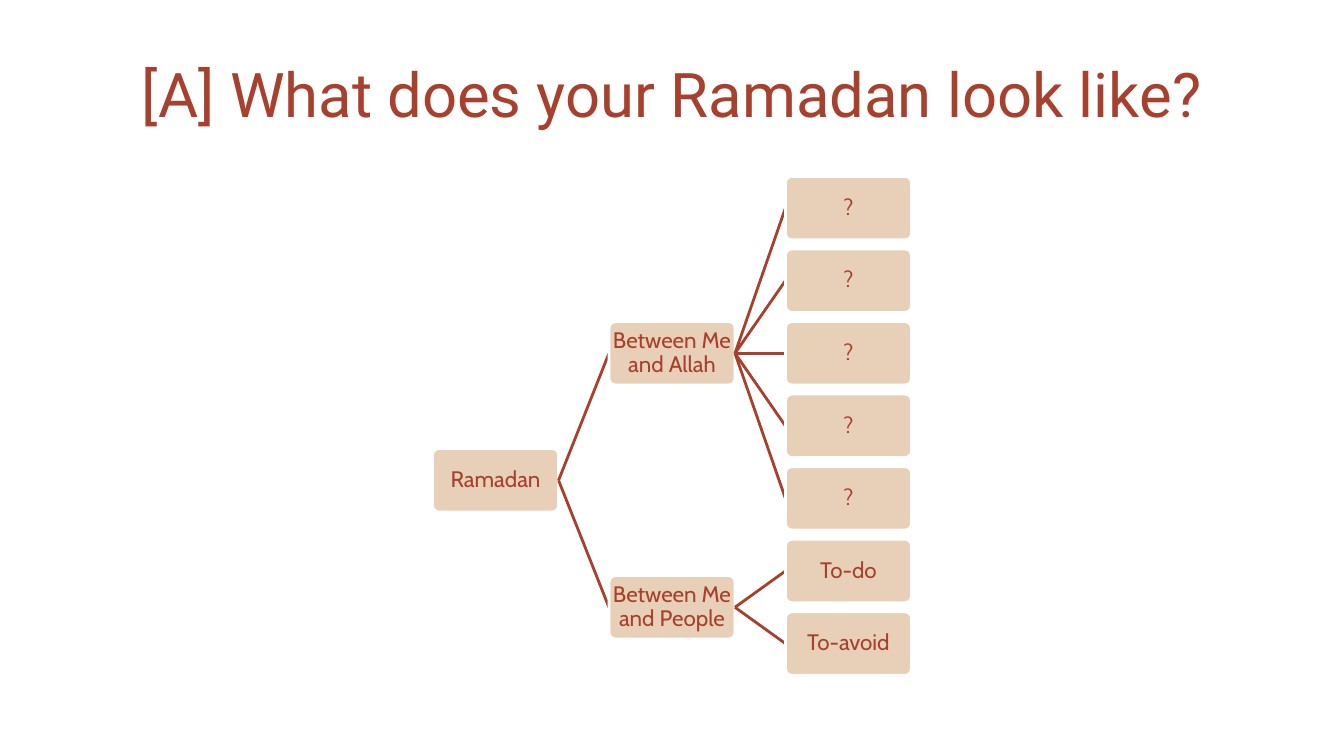
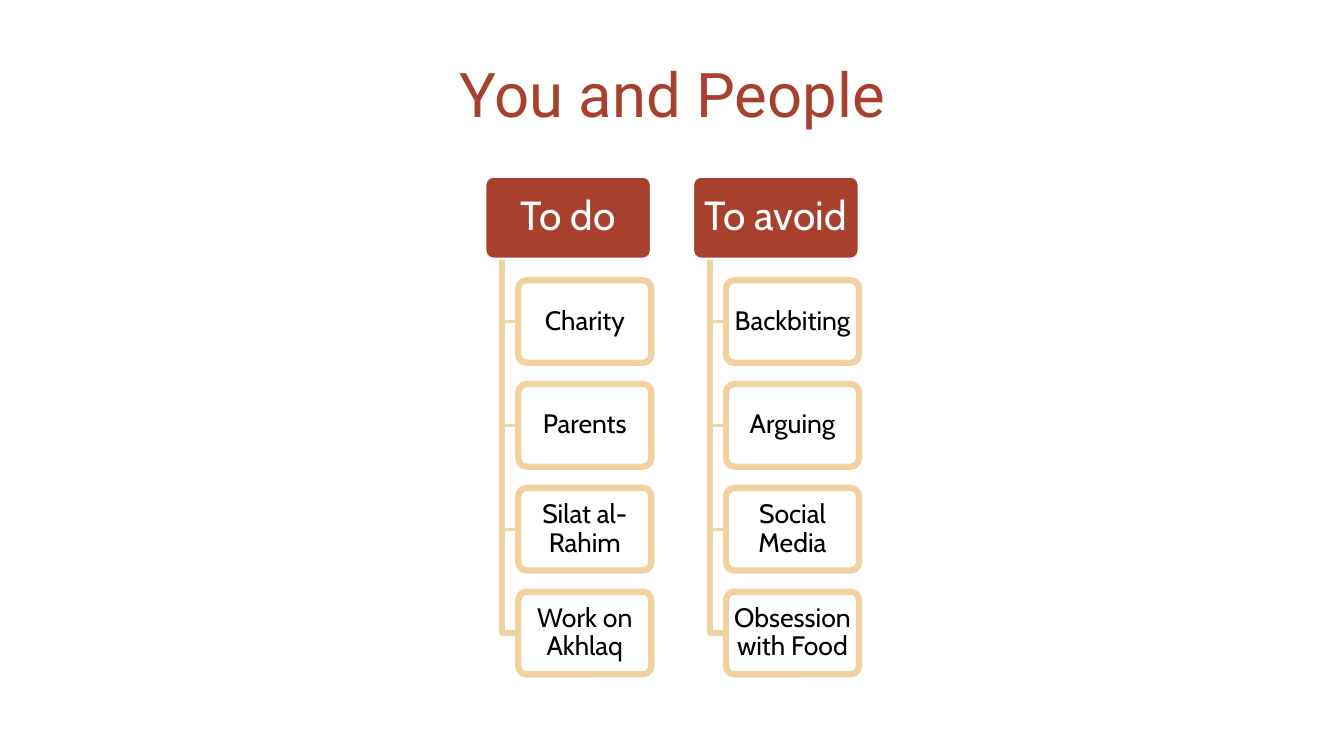
from lxml import etree
from pptx import Presentation
from pptx.dml.color import RGBColor
from pptx.enum.shapes import MSO_CONNECTOR, MSO_SHAPE
from pptx.enum.text import MSO_ANCHOR, PP_ALIGN
from pptx.oxml.ns import qn
from pptx.util import Pt

PX = 9144
SLIDE_SIZE = (1333, 750)
TITLE_BOX = (67, 30, 1200, 125)
TREE_BOX = (429, 175, 475, 495)
LISTS_BOX = (481, 175, 371, 494)

RUST = RGBColor(0xA7, 0x40, 0x2C)
SAND = RGBColor(0xE7, 0xD0, 0xB7)
GOLD = RGBColor(0xF0, 0xD2, 0xA1)
WHITE = RGBColor(0xFF, 0xFF, 0xFF)
BLACK = RGBColor(0x00, 0x00, 0x00)

ROUNDED = MSO_SHAPE.ROUNDED_RECTANGLE
STRAIGHT = MSO_CONNECTOR.STRAIGHT
CENTER = PP_ALIGN.CENTER
MIDDLE = MSO_ANCHOR.MIDDLE
LEFT_SIDE, RIGHT_SIDE = 1, 3

NODE = {"fill": SAND, "line": WHITE, "weight": 2, "margins": (1, 1),
        "size": 16, "color": RUST}
HEADING = {"fill": RUST, "line": WHITE, "weight": 2, "margins": (6, 4),
           "size": 29, "color": WHITE}
ITEM = {"fill": WHITE, "opacity": 90, "line": GOLD, "weight": 4.5,
        "margins": (4, 3), "size": 19, "color": BLACK}

BRANCHES = [
    ("Between Me and Allah", ["?", "?", "?", "?", "?"]),
    ("Between Me and People", ["To-do", "To-avoid"]),
]
LISTS = [
    ("To do", ["Charity", "Parents", "Silat al-Rahim", "Work on Akhlaq"]),
    ("To avoid", ["Backbiting", "Arguing", "Social Media", "Obsession with Food"]),
]


def emu(*lengths):
    return [round(length * PX) for length in lengths]


def apply(target, values):
    for name, value in values.items():
        setattr(target, name, value)


def write(frame, text, font, size, color, spacing=1.0):
    apply(frame, {"word_wrap": True, "vertical_anchor": MIDDLE})
    paragraph = frame.paragraphs[0]
    apply(paragraph, {"text": text, "alignment": CENTER, "line_spacing": spacing})
    apply(paragraph.font, {"name": font, "size": Pt(size)})
    paragraph.font.color.rgb = color


def stroke(line, color, weight):
    line.color.rgb = color
    line.width = Pt(weight)


def add_title(slide, text):
    title = slide.shapes.add_textbox(*emu(*TITLE_BOX))
    write(title.text_frame, text, "Roboto", 44, RUST)


def add_card(slide, box, text, style):
    card = slide.shapes.add_shape(ROUNDED, *emu(*box))
    card.adjustments[0] = 0.1
    card.shadow.inherit = False
    card.fill.solid()
    card.fill.fore_color.rgb = style["fill"]
    if "opacity" in style:
        fill_color = card.fill._xPr.find(qn("a:solidFill"))[0]
        alpha = etree.SubElement(fill_color, qn("a:alpha"))
        alpha.set("val", str(style["opacity"] * 1000))
    stroke(card.line, style["line"], style["weight"])
    side, end = emu(*style["margins"])
    apply(card.text_frame, {"margin_left": side, "margin_right": side,
                            "margin_top": end, "margin_bottom": end})
    write(card.text_frame, text, "Cabin", style["size"], style["color"], 0.9)
    return card


def add_child(slide, parent, box, text):
    link = slide.shapes.add_connector(STRAIGHT, 0, 0, 0, 0)
    stroke(link.line, RUST, 2)
    etree.SubElement(link._element.spPr, qn("a:effectLst"))
    link.begin_connect(parent, RIGHT_SIDE)
    child = add_card(slide, box, text, NODE)
    link.end_connect(child, LEFT_SIDE)
    return child


def add_tree(slide, box, root_text, branches):
    left, top, width, height = box
    node_width, node_height = 125, 63
    column_step = (width - node_width) / 2
    leaf_count = sum(len(leaves) for _, leaves in branches)
    leaf_step = (height - node_height) / (leaf_count - 1)

    def place(column, row):
        return (left + column * column_step, top + row * leaf_step,
                node_width, node_height)

    branch_rows, first_row = [], 0
    for _, leaves in branches:
        branch_rows.append(first_row + (len(leaves) - 1) / 2)
        first_row += len(leaves)
    root_row = sum(branch_rows) / len(branch_rows)
    root = add_card(slide, place(0, root_row), root_text, NODE)
    leaf_row = 0
    for (branch_text, leaves), branch_row in zip(branches, branch_rows):
        branch = add_child(slide, root, place(1, branch_row), branch_text)
        for leaf_text in leaves:
            add_child(slide, branch, place(2, leaf_row), leaf_text)
            leaf_row += 1


def add_elbow(slide, start, end, weight):
    corner = (start[0], end[1])
    builder = slide.shapes.build_freeform(*emu(*start), scale=1.0)
    builder.add_line_segments([emu(*corner), emu(*end)], close=False)
    elbow = builder.convert_to_shape()
    elbow.shadow.inherit = False
    elbow.fill.background()
    stroke(elbow.line, GOLD, weight)


def add_list(slide, box, heading, items):
    left, top, width, height = box
    card_height, indent, stem_offset = 82, 33, 17
    step = (height - card_height) / len(items)
    add_card(slide, (left, top, width, card_height), heading, HEADING)
    for row, text in enumerate(items, 1):
        item_left, item_top = left + indent, top + row * step
        add_elbow(slide, (left + stem_offset, top + card_height + 1),
                  (item_left, item_top + card_height / 2),
                  4.5 if row == len(items) else 2)
        add_card(slide, (item_left, item_top, width - indent, card_height),
                 text, ITEM)


def add_lists(slide, box, lists):
    left, top, width, height = box
    list_width = 165
    step = (width - list_width) / (len(lists) - 1)
    for column, (heading, items) in enumerate(lists):
        add_list(slide, (left + column * step, top, list_width, height),
                 heading, items)


def main():
    deck = Presentation()
    deck.slide_width, deck.slide_height = emu(*SLIDE_SIZE)
    blank = deck.slide_layouts[6]

    overview = deck.slides.add_slide(blank)
    add_title(overview, "[A] What does your Ramadan look like?")
    add_tree(overview, TREE_BOX, "Ramadan", BRANCHES)

    people = deck.slides.add_slide(blank)
    add_title(people, "You and People")
    add_lists(people, LISTS_BOX, LISTS)

    deck.save("out.pptx")


if __name__ == "__main__":
    main()
